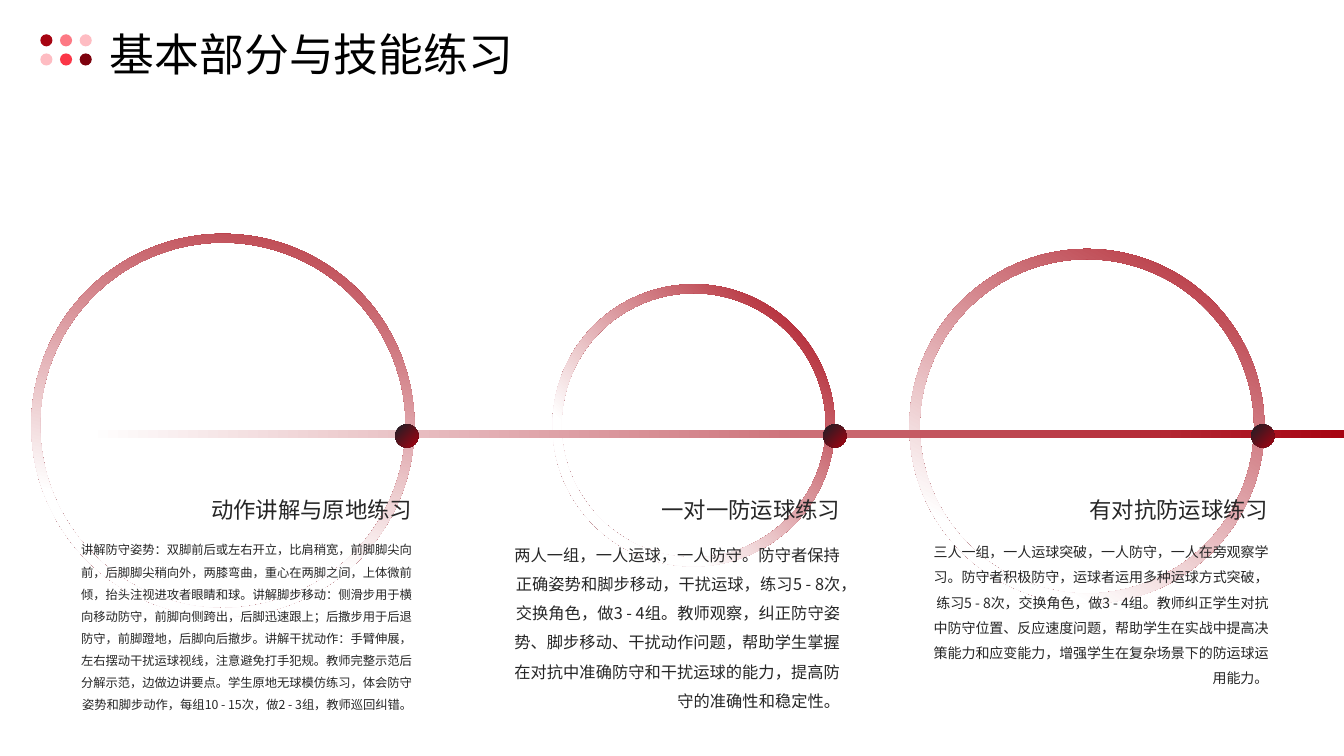
"""Build the slide on basic drills: three rings along a fading timeline."""
from lxml import etree
from pptx import Presentation
from pptx.dml.color import RGBColor
from pptx.enum.shapes import MSO_SHAPE
from pptx.enum.text import MSO_ANCHOR, PP_ALIGN
from pptx.oxml.ns import qn
from pptx.util import Emu, Pt

RECT, OVAL, DONUT = MSO_SHAPE.RECTANGLE, MSO_SHAPE.OVAL, MSO_SHAPE.DONUT
TOP, MIDDLE = MSO_ANCHOR.TOP, MSO_ANCHOR.MIDDLE
LEFT, RIGHT = PP_ALIGN.LEFT, PP_ALIGN.RIGHT

PX = 9144
WIDTH, HEIGHT = 1333, 750
FONT = "Noto Sans CJK SC"
COLORS = {
    "backdrop": "FAFAFA", "white": "FFFFFF", "black": "000000", "ink": "262626",
    "night": "1B1F26", "red": "A60311", "coral": "FD7984", "blush": "FEBCC2",
    "scarlet": "FB3647", "maroon": "7D020D",
}

TITLE = "基本部分与技能练习"
BULLET_GRID = [["red", "coral", "blush"], ["blush", "scarlet", "maroon"]]
STAGES = [
    {"heading": "动作讲解与原地练习", "size": 8.8,
     "body": "讲解防守姿势：双脚前后或左右开立，比肩稍宽，前脚脚尖向前，后脚脚尖稍向外，"
             "两膝弯曲，重心在两脚之间，上体微前倾，抬头注视进攻者眼睛和球。"
             "讲解脚步移动：侧滑步用于横向移动防守，前脚向侧跨出，后脚迅速跟上；"
             "后撒步用于后退防守，前脚蹬地，后脚向后撤步。"
             "讲解干扰动作：手臂伸展，左右摆动干扰运球视线，注意避免打手犯规。"
             "教师完整示范后分解示范，边做边讲要点。学生原地无球模仿练习，"
             "体会防守姿势和脚步动作，每组10 - 15次，做2 - 3组，教师巡回纠错。",
     "ring": (31, 232, 380), "turn": 60, "band": 0.023, "fade": 0.67},
    {"heading": "一对一防运球练习", "size": 11.6,
     "body": "两人一组，一人运球，一人防守。防守者保持正确姿势和脚步移动，干扰运球，"
             "练习5 - 8次，交换角色，做3 - 4组。教师观察，纠正防守姿势、脚步移动、"
             "干扰动作问题，帮助学生掌握在对抗中准确防守和干扰运球的能力，"
             "提高防守的准确性和稳定性。",
     "ring": (548, 282, 280), "turn": 90, "band": 0.032, "fade": 0.73},
    {"heading": "有对抗防运球练习", "size": 10,
     "body": "三人一组，一人运球突破，一人防守，一人在旁观察学习。防守者积极防守，"
             "运球者运用多种运球方式突破，练习5 - 8次，交换角色，做3 - 4组。"
             "教师纠正学生对抗中防守位置、反应速度问题，帮助学生在实战中提高决策能力和应变能力，"
             "增强学生在复杂场景下的防运球运用能力。",
     "ring": (902, 247, 352), "turn": 75, "band": 0.029, "fade": 0.76},
]
COLUMN_LEFT, COLUMN_STEP, COLUMN_WIDTH = 72, 424.5, 337
DOT_OFFSET, DOT_TOP, DOT_SIZE = 320, 421, 23


def rgb(name):
    return RGBColor.from_string(COLORS[name])


def add_figure(page, kind, left, top, width, height):
    figure = page.shapes.add_shape(kind, *(Emu(round(n * PX)) for n in (left, top, width, height)))
    figure.shadow.inherit = False
    figure.line.fill.background()
    return figure


def fill_solid(figure, color):
    figure.fill.solid()
    figure.fill.fore_color.rgb = rgb(color)


def fill_gradient(figure, start, end, angle, end_position=1.0):
    figure.fill.gradient()
    figure.fill.gradient_angle = -angle % 360
    stops = figure.fill.gradient_stops
    for stop, color, position in zip(stops, (start, end), (0.0, end_position)):
        stop.color.rgb = rgb(color)
        stop.position = position


def add_text(page, text, place, size, color, align, spacing, anchor=TOP):
    box = page.shapes.add_textbox(*(Emu(round(n * PX)) for n in place))
    frame = box.text_frame
    frame.word_wrap = True
    frame.vertical_anchor = anchor
    frame.margin_left = frame.margin_right = frame.margin_top = frame.margin_bottom = 0
    para = frame.paragraphs[0]
    para.alignment = align
    para.line_spacing = spacing
    span = para.add_run()
    span.text = text
    span.font.size = Pt(size)
    span.font.name = FONT
    span.font.color.rgb = rgb(color)
    etree.SubElement(span.font._element, qn("a:ea")).set("typeface", FONT)


def add_ring(page, stage):
    left, top, size = stage["ring"]
    ring = add_figure(page, DONUT, left, top, size, size)
    ring.adjustments[0] = stage["band"]
    ring.rotation = stage["turn"]
    fill_gradient(ring, "red", "white", 45, stage["fade"])


def main():
    deck = Presentation()
    deck.slide_width, deck.slide_height = Emu(WIDTH * PX), Emu(HEIGHT * PX)
    page = deck.slides.add_slide(deck.slide_layouts[6])
    page.background.fill.solid()
    page.background.fill.fore_color.rgb = rgb("backdrop")
    fill_solid(add_figure(page, RECT, 0, 0, WIDTH, HEIGHT), "white")

    first, second, third = STAGES
    add_ring(page, third)
    add_ring(page, second)
    timeline = add_figure(page, RECT, 87, 427, 1253, 8)
    fill_gradient(timeline, "white", "red", 0)
    add_ring(page, first)

    for index, stage in enumerate(STAGES):
        left = COLUMN_LEFT + index * COLUMN_STEP
        dot = add_figure(page, OVAL, left + DOT_OFFSET, DOT_TOP, DOT_SIZE, DOT_SIZE)
        fill_gradient(dot, "night", "red", 45)
        add_text(page, stage["heading"], (left, 479, COLUMN_WIDTH, 54), 16, "ink", RIGHT, 1.5)
        add_text(page, stage["body"], (left, 531, COLUMN_WIDTH, 151),
                 stage["size"], "ink", RIGHT, 1.5)

    add_text(page, TITLE, (109, 24, 1184, 47), 32, "black", LEFT, 1.2, MIDDLE)
    for row, colors in enumerate(BULLET_GRID):
        for column, color in enumerate(colors):
            bullet = add_figure(page, OVAL, 40 + column * 19.5, 34 + row * 19, 12, 12)
            fill_solid(bullet, color)

    deck.save("out.pptx")


if __name__ == "__main__":
    main()
